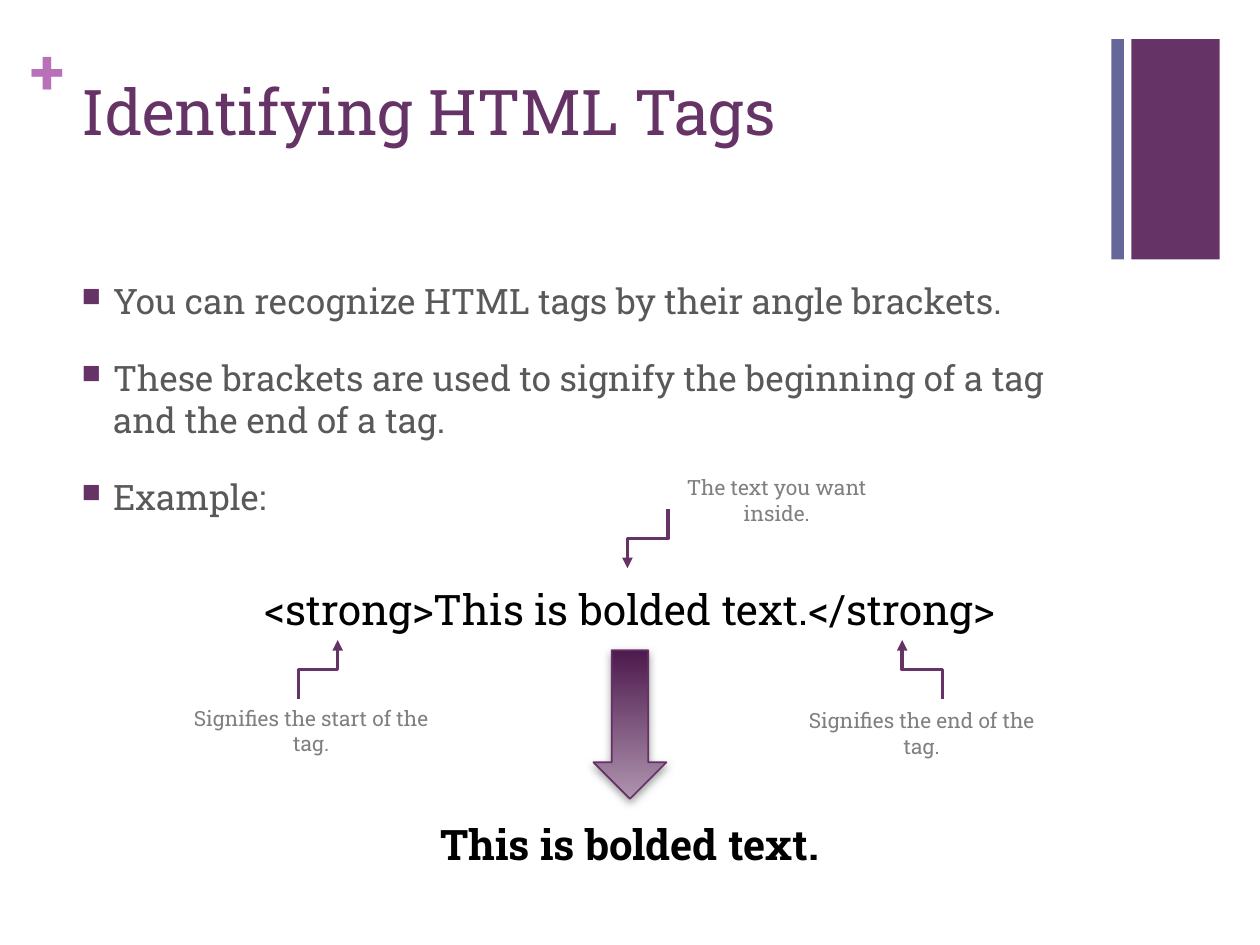
import pptx
import pptx.dml.color
import pptx.enum.shapes
import pptx.enum.text
import pptx.oxml
import pptx.oxml.ns
import pptx.util
from dataclasses import dataclass

Inches = pptx.util.Inches
Pt = pptx.util.Pt
LEFT = pptx.enum.text.PP_ALIGN.LEFT
CENTER = pptx.enum.text.PP_ALIGN.CENTER


@dataclass(frozen=True)
class Theme:
    font: str = "Roboto Slab"
    purple: str = "663366"
    blue: str = "666699"
    plus: str = "B870B8"
    body: str = "595959"
    note: str = "808080"
    code: str = "000000"
    arrow_top: str = "4D1A4D"
    arrow_bottom: str = "AF94AF"
    arrow_line: str = "653165"
    title_size: int = 36
    body_size: int = 20
    code_size: int = 24
    note_size: int = 12


THEME = Theme()


def rgb(value):
    return pptx.dml.color.RGBColor.from_string(value)


def parse_drawing(tag, attributes="", content=""):
    namespace = pptx.oxml.ns.nsdecls("a")
    return pptx.oxml.parse_xml(f"<a:{tag} {namespace} {attributes}>{content}</a:{tag}>")


def add_text(slide, box, lines, size, color, align=LEFT, bold=False, inset=True):
    shape = slide.shapes.add_textbox(*map(Inches, box))
    text_frame = shape.text_frame
    text_frame.word_wrap = True
    if not inset:
        text_frame.margin_left = text_frame.margin_right = 0
        text_frame.margin_top = text_frame.margin_bottom = 0
    text_frame.text = lines
    for paragraph in text_frame.paragraphs:
        paragraph.alignment = align
        font = paragraph.runs[0].font
        font.name = THEME.font
        font.size = Pt(size)
        font.bold = bold
        font.color.rgb = rgb(color)
    return shape


def add_bullets(slide, box, items):
    shape = add_text(slide, box, "\n".join(items), THEME.body_size, THEME.body)
    for paragraph in shape.text_frame.paragraphs:
        paragraph.space_before = Pt(20)
        properties = paragraph._p.get_or_add_pPr()
        properties.set("marL", str(Inches(0.25)))
        properties.set("indent", str(-Inches(0.25)))
        properties.append(parse_drawing("buClr", content=f'<a:srgbClr val="{THEME.purple}"/>'))
        properties.append(parse_drawing("buSzPct", 'val="75000"'))
        properties.append(parse_drawing("buChar", 'char="■"'))


def add_block(slide, box, color):
    shape = slide.shapes.add_shape(pptx.enum.shapes.MSO_SHAPE.RECTANGLE, *map(Inches, box))
    shape.shadow.inherit = False
    shape.fill.solid()
    shape.fill.fore_color.rgb = rgb(color)
    shape.line.fill.background()


def add_result_arrow(slide, box):
    shape = slide.shapes.add_shape(pptx.enum.shapes.MSO_SHAPE.DOWN_ARROW, *map(Inches, box))
    shape.fill.gradient()
    shape.fill.gradient_angle = 270
    for stop, color in zip(shape.fill.gradient_stops, (THEME.arrow_top, THEME.arrow_bottom)):
        stop.color.rgb = rgb(color)
    shape.line.color.rgb = rgb(THEME.arrow_line)
    shape.line.width = Pt(1)
    # Soft shadow straight below the arrow
    shadow = (f'<a:outerShdw blurRad="{Pt(5)}" dist="{Pt(2)}" dir="5400000" rotWithShape="0">'
              '<a:srgbClr val="808080"><a:alpha val="75000"/></a:srgbClr></a:outerShdw>')
    shape._element.spPr.append(parse_drawing("effectLst", content=shadow))


def add_pointer(slide, start, end):
    """Elbow arrow that leaves and arrives vertically: a turned horizontal elbow."""
    (x1, y1), (x2, y2) = start, end
    center_x, center_y = (x1 + x2) / 2, (y1 + y2) / 2
    half_width, half_height = abs(y2 - y1) / 2, abs(x2 - x1) / 2
    connector = slide.shapes.add_connector(
        pptx.enum.shapes.MSO_CONNECTOR.ELBOW,
        Inches(center_x - half_width), Inches(center_y - half_height),
        Inches(center_x + half_width), Inches(center_y + half_height))
    upward = y2 < y1
    properties = connector._element.spPr
    transform = properties.find(pptx.oxml.ns.qn("a:xfrm"))
    transform.set("rot", str((270 if upward else 90) * 60000))
    if upward != (x2 > x1):
        transform.set("flipV", "1")
    connector.line.color.rgb = rgb(THEME.purple)
    connector.line.width = Pt(2)
    connector.line._get_or_add_ln().append(parse_drawing("tailEnd", 'type="triangle"'))
    properties.append(parse_drawing("effectLst"))


def main():
    presentation = pptx.Presentation()
    presentation.slide_width = Inches(10)
    presentation.slide_height = Inches(7.5)
    slide = presentation.slides.add_slide(presentation.slide_layouts[6])

    # Corner decoration
    add_block(slide, (8.98, 0.31, 0.7, 1.75), THEME.purple)
    add_text(slide, (0.24, 0.25, 0.29, 0.61), "+", THEME.title_size, THEME.plus,
             bold=True, inset=False)
    add_block(slide, (8.82, 0.31, 0.1, 1.75), THEME.blue)

    # Title and explanation
    add_text(slide, (0.55, 0.53, 8.26, 1.22), "Identifying HTML Tags",
             THEME.title_size, THEME.purple)
    add_bullets(slide, (0.55, 2.17, 8.26, 4.53), (
        "You can recognize HTML tags by their angle brackets.",
        "These brackets are used to signify the beginning of a tag and the end of a tag.",
        "Example:"))

    # Markup and its result
    add_text(slide, (0.93, 4.58, 8.14, 0.5), "<strong>This is bolded text.</strong>",
             THEME.code_size, THEME.code, CENTER)
    add_text(slide, (0.93, 6.45, 8.14, 0.5), "This is bolded text.",
             THEME.code_size, THEME.code, CENTER, bold=True)
    add_result_arrow(slide, (4.71, 5.16, 0.58, 1.18))

    # Notes with their pointers
    notes = (
        ("Signifies the start of the tag.", (1.3, 5.55, 2.34, 0.3), (2.37, 5.55), (2.68, 5.08)),
        ("Signifies the end of the tag.", (6.17, 5.57, 2.29, 0.3), (7.48, 5.55), (7.16, 5.08)),
        ("The text you want inside.", (5.11, 3.72, 2.11, 0.3), (5.3, 4.04), (4.98, 4.51)),
    )
    for text, box, start, end in notes:
        add_pointer(slide, start, end)
        add_text(slide, box, text, THEME.note_size, THEME.note, CENTER)

    presentation.save("out.pptx")


if __name__ == "__main__":
    main()
